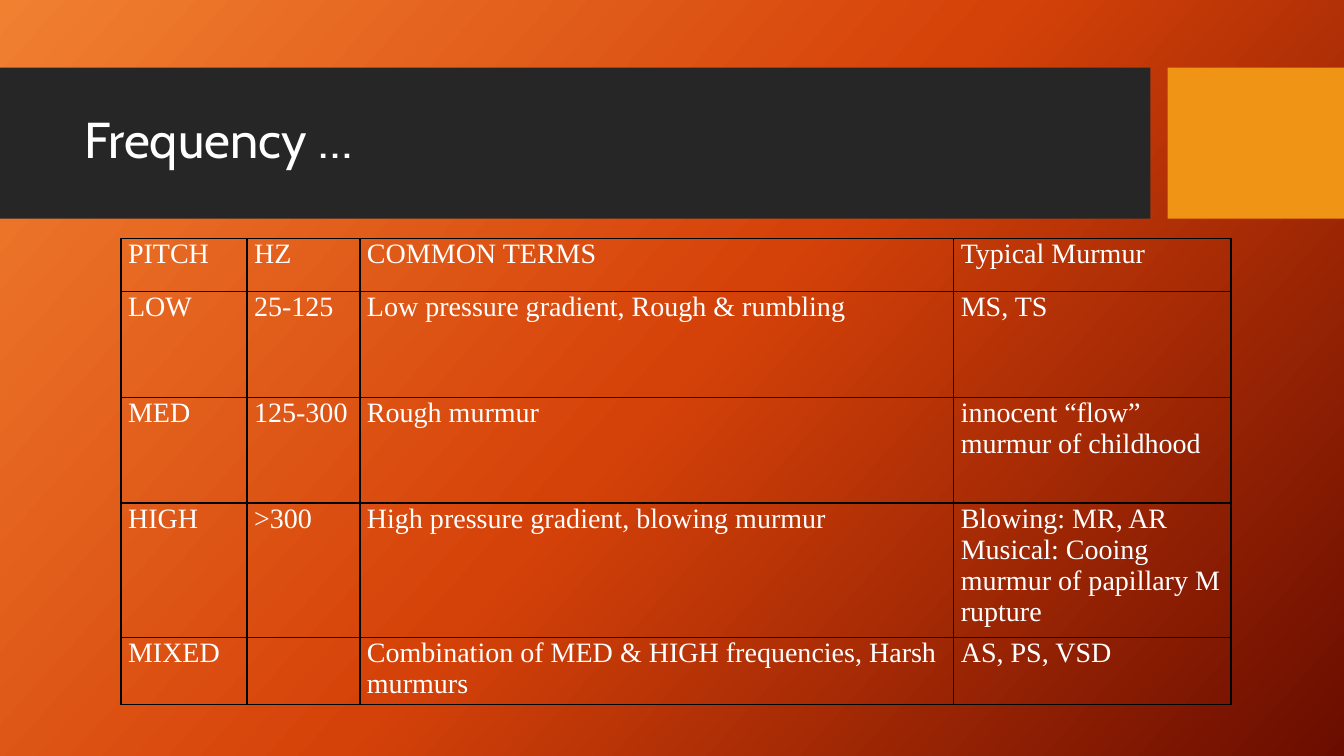
import copy

import lxml.etree
import pptx
import pptx.dml.color
import pptx.enum.shapes
import pptx.enum.text
import pptx.oxml.ns
import pptx.util

qn = pptx.oxml.ns.qn


def px(n):
    return pptx.util.Emu(n * 9144)


def rgb(value):
    return pptx.dml.color.RGBColor.from_string(value)


class Deck:
    heading_font = "Cabin"
    body_font = "Times New Roman"
    text_color = "FFFFFF"
    border_color = "000000"

    def __init__(self, width, height):
        self.prs = pptx.Presentation()
        self.prs.slide_width = px(width)
        self.prs.slide_height = px(height)
        self.s = self.prs.slides.add_slide(self.prs.slide_layouts[6])

    def gradient(self, colors, angle):
        fill = self.s.background.fill
        fill.gradient()
        fill.gradient_angle = 360 - angle
        stops = self.s._element.find(".//" + qn("a:gsLst"))
        while len(stops) < len(colors):
            stops.append(copy.deepcopy(stops[-1]))
        for i, (stop, color) in enumerate(zip(fill.gradient_stops, colors)):
            stop.position = i / (len(colors) - 1)
            stop.color.rgb = rgb(color)

    def rect(self, x, y, w, h, color):
        sp = self.s.shapes.add_shape(
            pptx.enum.shapes.MSO_SHAPE.RECTANGLE, px(x), px(y), px(w), px(h))
        sp.shadow.inherit = False
        sp.fill.solid()
        sp.fill.fore_color.rgb = rgb(color)
        sp.line.fill.background()

    def format(self, tf, font, size):
        for p in tf.paragraphs:
            for r in p.runs:
                r.font.name = font
                r.font.size = pptx.util.Pt(size)
                r.font.color.rgb = rgb(self.text_color)

    def title(self, x, y, w, h, text):
        tf = self.s.shapes.add_textbox(px(x), px(y), px(w), px(h)).text_frame
        tf.word_wrap = True
        tf.vertical_anchor = pptx.enum.text.MSO_ANCHOR.MIDDLE
        tf.text = text
        tf.paragraphs[0].line_spacing = 0.9
        self.format(tf, self.heading_font, 36)

    def border(self, cell):
        tcPr = cell._tc.get_or_add_tcPr()
        for side in ("lnL", "lnR", "lnT", "lnB"):
            ln = lxml.etree.SubElement(tcPr, qn("a:" + side), w="12700")
            fill = lxml.etree.SubElement(ln, qn("a:solidFill"))
            lxml.etree.SubElement(fill, qn("a:srgbClr"), val=self.border_color)

    def table(self, x, y, widths, heights, rows):
        table = self.s.shapes.add_table(
            len(rows), len(widths), px(x), px(y),
            px(sum(widths)), px(sum(heights))).table
        table.first_row = False
        table.horz_banding = False
        for column, width in zip(table.columns, widths):
            column.width = px(width)
        for row, height, texts in zip(table.rows, heights, rows):
            row.height = px(height)
            for cell, text in zip(row.cells, texts):
                self.border(cell)
                cell.fill.background()
                cell.margin_left = cell.margin_right = px(7)
                cell.margin_top = cell.margin_bottom = 0
                cell.text_frame.text = text
                self.format(cell.text_frame, self.body_font, 20)


def main():
    deck = Deck(1333, 750)
    deck.gradient(["F18031", "D54209", "6A0D00"], 42)
    deck.rect(0, 67, 1141, 150, "262626")
    deck.rect(1158, 67, 175, 150, "F09415")
    deck.title(74, 82, 1051, 118, "Frequency …")
    deck.table(120, 237, [125, 112, 589, 275], [52, 105, 105, 127, 63], [
        ["PITCH", "HZ", "COMMON TERMS", "Typical Murmur"],
        ["LOW", "25-125", "Low pressure gradient, Rough & rumbling", "MS, TS"],
        ["MED", "125-300", "Rough murmur",
         "innocent “flow” murmur of childhood"],
        ["HIGH", ">300", "High pressure gradient, blowing murmur",
         "Blowing: MR, AR\nMusical: Cooing murmur of papillary M rupture"],
        ["MIXED", "", "Combination of MED & HIGH frequencies, Harsh murmurs",
         "AS, PS, VSD"],
    ])
    deck.prs.save("out.pptx")


if __name__ == "__main__":
    main()
